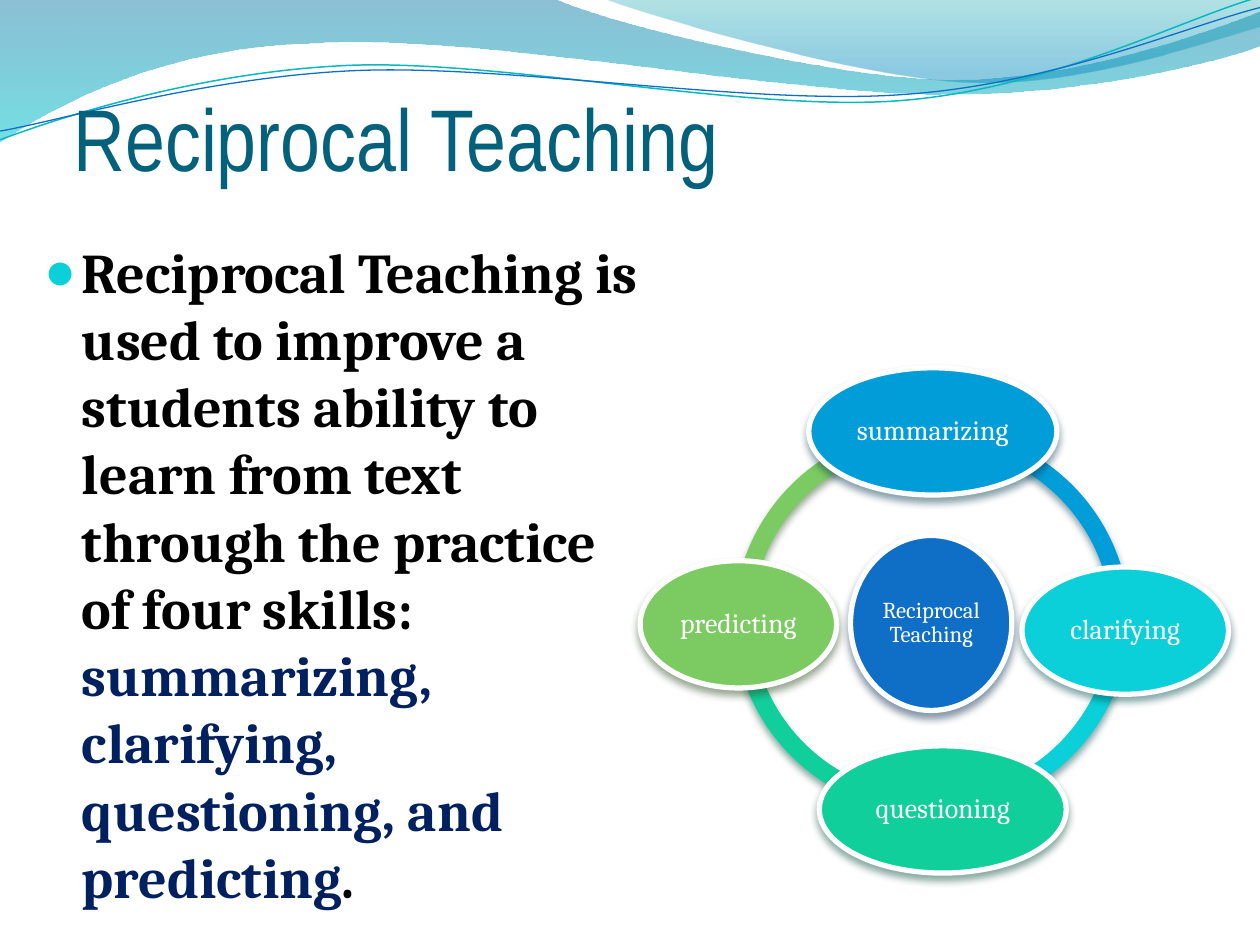
from lxml import etree
from pptx import Presentation
from pptx.dml.color import RGBColor
from pptx.enum import shapes, text
from pptx.oxml import ns
from pptx.util import Pt

WHITE = RGBColor(0xFF, 0xFF, 0xFF)
BLACK = RGBColor(0x00, 0x00, 0x00)
NAVY = RGBColor(0x00, 0x20, 0x60)
TITLE_TEAL = RGBColor(0x04, 0x61, 0x7B)
BLUE = RGBColor(0x0F, 0x6F, 0xC6)
SKY = RGBColor(0x00, 0x9D, 0xD9)
CYAN = RGBColor(0x0B, 0xD0, 0xD9)
MINT = RGBColor(0x10, 0xCF, 0x9B)
GREEN = RGBColor(0x7C, 0xCA, 0x62)
LINE_TEAL = RGBColor(0x0A, 0xB8, 0xBF)
WAVE_BLUE = RGBColor(0x00, 0x74, 0xA1)
WAVE_TEAL = RGBColor(0x00, 0xC6, 0xCF)
CREST_TEAL = RGBColor(0x00, 0xA1, 0xA9)
CREST_BLUE = RGBColor(0x00, 0x8B, 0xBF)
SHADOWS = {
    BLUE: RGBColor(0x04, 0x27, 0x47),
    SKY: RGBColor(0x00, 0x37, 0x4C),
    CYAN: RGBColor(0x02, 0x4B, 0x4E),
    MINT: RGBColor(0x04, 0x4A, 0x37),
    GREEN: RGBColor(0x2B, 0x48, 0x21),
}

WAVE = [[(0, 0)], [(316.8, -0.7)],
        [(342.7, 12.2), (478.1, 45.4), (545.8, 45.4)],
        [(614.2, 45.4), (689.8, 18.7), (720, 6.5)], [(720.7, 25.9)],
        [(707.8, 31.7), (626.4, 54.7), (537.1, 54)],
        [(447.8, 54), (275, 20.2), (185, 24.5)],
        [(92.9, 25.9), (33.1, 59.8), (-0.7, 81.4)]]
CREST = [[(344.9, -0.7)], [(366.5, 7.9), (491, 44.6), (553.7, 46.8)],
         [(616.3, 49.7), (691.9, 23), (720, 15.1)], [(720, 0)]]
TEAL_LINE = [[(0, 79.9)], [(34.6, 67), (113.8, 41), (199.4, 37.4)],
             [(284.4, 33.8), (427, 64.1), (513.4, 57.6)],
             [(599.8, 51.1), (675.4, 10.8), (718.6, -1.4)]]
BLUE_LINE = [[(0, 74.9)], [(33.8, 69.1), (118.1, 43.9), (203.8, 40.3)],
             [(290.2, 36.7), (429.8, 60.5), (516.2, 54)],
             [(601.9, 48.2), (677.5, 15.1), (720, 4.3)]]

ARCS = [(419, 244, 107.98, 162.15, GREEN), (419, 239, 52.03, 106.5, MINT),
        (419.8, 239, 2.59, 52.16, CYAN), (419.8, 244, 162.14, 1.1, SKY)]
OVALS = [("Reciprocal Teaching", 486, 306, 92.2, 100, 13, BLUE),
         ("summarizing", 462.2, 210.2, 141.8, 72.7, 16, SKY),
         ("clarifying", 584, 324, 118, 72.7, 16, CYAN),
         ("questioning", 468.2, 426.2, 141.1, 72.7, 16, MINT),
         ("predicting", 365.8, 320.4, 112.3, 72.7, 16, GREEN)]


def add_curve(slide, outline, close):
    """Add a freeform whose three-point segments are cubic curves."""
    start, *points = [(Pt(x), Pt(y)) for segment in outline for x, y in segment]
    builder = slide.shapes.build_freeform(*start, scale=1.0)
    builder.add_line_segments(points, close=close)
    shape = builder.convert_to_shape()
    shape.shadow.inherit = False
    lines = iter(list(shape.element.iter(ns.qn("a:lnTo"))))
    for segment in outline[1:]:
        group = [next(lines) for _ in segment]
        if len(group) == 3:
            curve = etree.Element(ns.qn("a:cubicBezTo"))
            group[0].addprevious(curve)
            for line in group:
                curve.append(line[0])
                line.getparent().remove(line)
    return shape


def add_wave(slide, outline, stops):
    """Add a wave with a translucent vertical gradient."""
    shape = add_curve(slide, outline, True)
    shape.line.fill.background()
    shape.fill.gradient()
    shape.fill.gradient_angle = 270
    for stop, (position, color, _) in zip(shape.fill.gradient_stops, stops):
        stop.position = position
        stop.color.rgb = color
    for node, (_, _, alpha) in zip(shape.element.iter(ns.qn("a:srgbClr")), stops):
        etree.SubElement(node, ns.qn("a:alpha"), val=str(alpha * 1000))


def add_wave_line(slide, outline, color, width):
    """Add a thin curved line."""
    shape = add_curve(slide, outline, False)
    shape.fill.background()
    shape.line.color.rgb = color
    shape.line.width = Pt(width)


def add_shaded(slide, kind, left, top, width, height, color):
    """Add a filled preset shape with a soft shadow below it."""
    shape = slide.shapes.add_shape(kind, Pt(left), Pt(top), Pt(width), Pt(height))
    shape.fill.solid()
    shape.fill.fore_color.rgb = color
    shape.shadow.inherit = False
    effects = shape.element.spPr.find(ns.qn("a:effectLst"))
    shadow = etree.SubElement(effects, ns.qn("a:outerShdw"), blurRad=str(Pt(4.5)),
                              dist=str(Pt(3)), dir="5400000", rotWithShape="0")
    tint = etree.SubElement(shadow, ns.qn("a:srgbClr"), val=str(SHADOWS[color]))
    etree.SubElement(tint, ns.qn("a:alpha"), val="48000")
    return shape


def add_arc(slide, left, top, start, end, color):
    """Add one quarter of the ring."""
    shape = add_shaded(slide, shapes.MSO_SHAPE.BLOCK_ARC, left, top, 226, 226, color)
    shape.line.fill.background()
    for index, value in enumerate((start, end, 0.046)):
        shape.adjustments[index] = value


def add_oval(slide, label, left, top, width, height, size, color):
    """Add a labelled oval with a white outline."""
    shape = add_shaded(slide, shapes.MSO_SHAPE.OVAL, left, top, width, height, color)
    shape.line.color.rgb = WHITE
    shape.line.width = Pt(3)
    frame = shape.text_frame
    frame.word_wrap = True
    frame.vertical_anchor = text.MSO_ANCHOR.MIDDLE
    frame.margin_left = frame.margin_right = Pt(1.5)
    frame.margin_top = frame.margin_bottom = Pt(1.5)
    paragraph = frame.paragraphs[0]
    paragraph.alignment = text.PP_ALIGN.CENTER
    paragraph.line_spacing = 0.9
    add_run(paragraph, label, "Cambria", size, WHITE)


def add_run(paragraph, words, font, size, color, bold=False):
    """Add a formatted run."""
    run = paragraph.add_run()
    run.text = words
    run.font.name = font
    run.font.size = Pt(size)
    run.font.bold = bold
    run.font.color.rgb = color


def place(placeholder, left, top, width, height, anchor):
    """Move a placeholder to the front and return its left-aligned paragraph."""
    placeholder.left, placeholder.top = Pt(left), Pt(top)
    placeholder.width, placeholder.height = Pt(width), Pt(height)
    placeholder.element.getparent().append(placeholder.element)
    frame = placeholder.text_frame
    frame.word_wrap = True
    frame.auto_size = text.MSO_AUTO_SIZE.NONE
    frame.vertical_anchor = anchor
    paragraph = frame.paragraphs[0]
    paragraph.alignment = text.PP_ALIGN.LEFT
    return paragraph


def fill_title(title):
    """Write the slide title."""
    paragraph = place(title, 42, 18, 648, 90, text.MSO_ANCHOR.BOTTOM)
    title.text_frame.margin_left = title.text_frame.margin_right = 0
    title.text_frame.margin_bottom = 0
    add_run(paragraph, "Reciprocal Teaching", "Arial Narrow", 50, TITLE_TEAL)


def fill_body(body):
    """Write the bulleted description."""
    paragraph = place(body, 18, 132, 360, 300, text.MSO_ANCHOR.TOP)
    paragraph.space_before = Pt(6.4)
    properties = paragraph._p.get_or_add_pPr()
    properties.set("marL", str(Pt(21.6)))
    properties.set("indent", str(Pt(-21.6)))
    bullet_color = etree.SubElement(properties, ns.qn("a:buClr"))
    etree.SubElement(bullet_color, ns.qn("a:srgbClr"), val=str(CYAN))
    etree.SubElement(properties, ns.qn("a:buSzPct"), val="95000")
    etree.SubElement(properties, ns.qn("a:buChar"), char="●")
    for words, color in (
        ("Reciprocal Teaching is used to improve a students ability to learn from text "
         "through the practice of four skills: ", BLACK),
        ("summarizing, clarifying, questioning, and predicting", NAVY),
        (".", BLACK),
    ):
        add_run(paragraph, words, "Cambria", 32, color, bold=True)


def main():
    """Build and save the slide."""
    presentation = Presentation()
    presentation.slide_width, presentation.slide_height = Pt(720), Pt(540)
    slide = presentation.slides.add_slide(presentation.slide_layouts[1])
    add_wave(slide, WAVE, [(0, WAVE_BLUE, 45), (1, WAVE_TEAL, 55)])
    add_wave(slide, CREST, [(0, CREST_TEAL, 30), (0.8, CREST_BLUE, 45)])
    add_wave_line(slide, TEAL_LINE, LINE_TEAL, 0.85)
    add_wave_line(slide, BLUE_LINE, BLUE, 0.75)
    fill_title(slide.shapes.title)
    for arc in ARCS:
        add_arc(slide, *arc)
    for oval in OVALS:
        add_oval(slide, *oval)
    fill_body(slide.placeholders[1])
    presentation.save("out.pptx")


if __name__ == "__main__":
    main()
